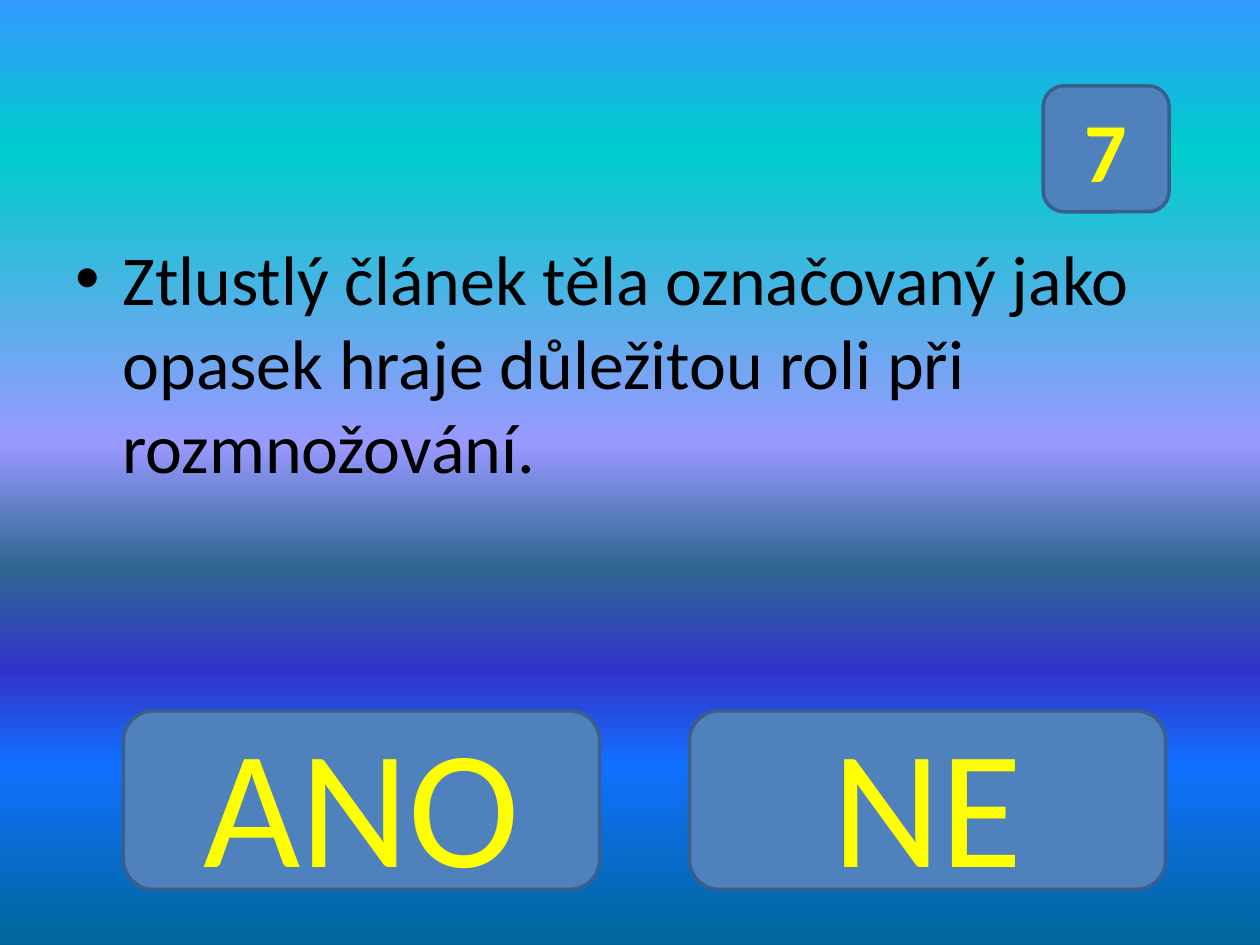
"""Build a quiz slide with a statement, a question number and yes/no buttons."""
from dataclasses import dataclass

from lxml import etree
from pptx import Presentation
from pptx import util as u
from pptx.dml.color import RGBColor
from pptx.enum import shapes, text
from pptx.oxml.ns import qn
from pptx.slide import Slide


@dataclass(frozen=True)
class Theme:
    font: str = "Calibri"
    button_fill: str = "4F81BD"
    button_line: str = "3A5F8C"
    button_text: str = "FFFF00"
    body_text: str = "000000"
    body_size: int = 40
    answer_size: int = 96
    number_size: int = 48
    line_width: int = 2
    sky: tuple[tuple[int, str], ...] = (
        (0, "3399FF"), (16, "00CCCC"), (47, "9999FF"), (60, "2E6792"),
        (71, "3333CC"), (81, "1170FF"), (100, "006699"),
    )


@dataclass(frozen=True)
class Button:
    label: str
    left: float
    top: float
    width: float
    height: float
    size: int
    bold: bool = False


THEME = Theme()
ANSWER_LEFT, ANSWER_STEP = 2.49, 11.41
ANSWERS = [
    Button(label, ANSWER_LEFT + index * ANSWER_STEP, 14.33, 9.6, 3.6, THEME.answer_size)
    for index, label in enumerate(("ANO", "NE"))
]
NUMBER = Button("7", 21.03, 1.73, 2.54, 2.54, THEME.number_size, True)
STATEMENT = "Ztlustlý článek těla označovaný jako opasek hraje důležitou roli při rozmnožování."


def paint_background(page: Slide) -> None:
    """Fill the page with the vertical gradient."""
    fill = page.background.fill
    fill.gradient()
    fill.gradient_angle = 270
    stops = next(page.element.iter(qn("a:gsLst")))
    for stop in list(stops):
        stops.remove(stop)
    for percent, color in THEME.sky:
        stop = etree.SubElement(stops, qn("a:gs"), pos=str(percent * 1000))
        etree.SubElement(stop, qn("a:srgbClr"), val=color)


def set_font(para, size: int, color: str, bold: bool = False) -> None:
    """Set the type of a whole paragraph."""
    para.font.name = THEME.font
    para.font.size = u.Pt(size)
    para.font.bold = bold
    para.font.color.rgb = RGBColor.from_string(color)


def add_statement(page: Slide) -> None:
    """Add the bulleted statement."""
    box = page.shapes.add_textbox(u.Cm(1.27), u.Cm(4.62), u.Cm(22.86), u.Cm(8.69))
    box.text_frame.word_wrap = True
    para = box.text_frame.paragraphs[0]
    para.text = STATEMENT
    set_font(para, THEME.body_size, THEME.body_text)
    properties = para._p.get_or_add_pPr()
    indent = u.Cm(0.95)
    properties.set("marL", str(indent))
    properties.set("indent", str(-indent))
    bullet_font = etree.Element(qn("a:buFont"), typeface="Arial")
    bullet = etree.Element(qn("a:buChar"), char="•")
    properties.insert(0, bullet_font)
    properties.insert(1, bullet)


def add_button(page: Slide, button: Button) -> None:
    """Add one rounded button with its centred label."""
    lengths = (button.left, button.top, button.width, button.height)
    box = page.shapes.add_shape(shapes.MSO_SHAPE.ROUNDED_RECTANGLE, *map(u.Cm, lengths))
    box.shadow.inherit = False
    box.fill.solid()
    box.fill.fore_color.rgb = RGBColor.from_string(THEME.button_fill)
    box.line.color.rgb = RGBColor.from_string(THEME.button_line)
    box.line.width = u.Pt(THEME.line_width)
    box.text_frame.word_wrap = True
    box.text_frame.vertical_anchor = text.MSO_ANCHOR.MIDDLE
    para = box.text_frame.paragraphs[0]
    para.text = button.label
    para.alignment = text.PP_ALIGN.CENTER
    set_font(para, button.size, THEME.button_text, button.bold)


def main() -> None:
    """Build and save the deck."""
    deck = Presentation()
    deck.slide_width, deck.slide_height = u.Cm(25.4), u.Cm(19.05)
    page = deck.slides.add_slide(deck.slide_layouts[6])
    paint_background(page)
    add_statement(page)
    for button in (*ANSWERS, NUMBER):
        add_button(page, button)
    deck.save("out.pptx")


if __name__ == "__main__":
    main()
